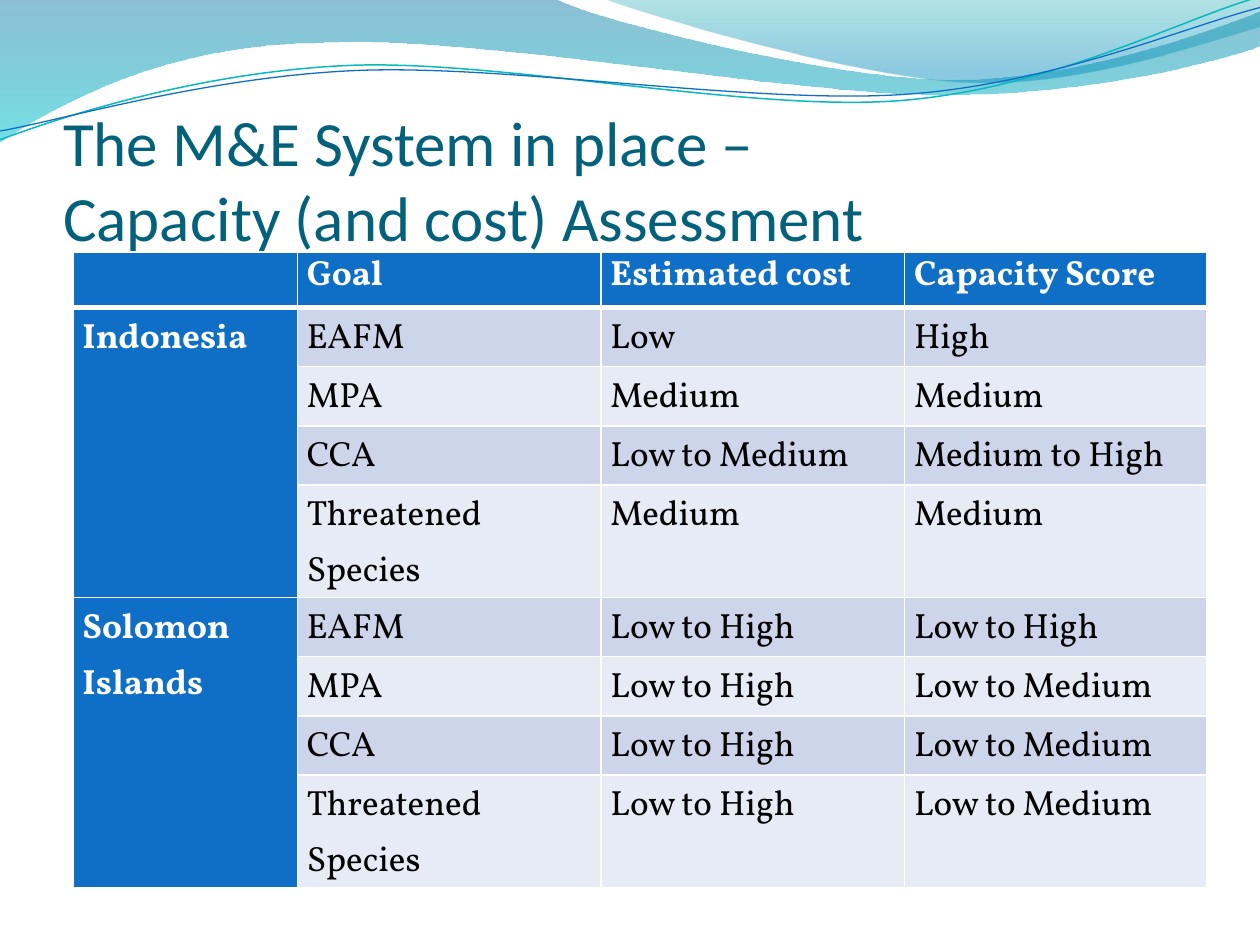
from dataclasses import dataclass

from lxml.etree import SubElement
from pptx import Presentation
from pptx.dml.color import RGBColor
from pptx.enum.text import MSO_ANCHOR, PP_ALIGN, MSO_AUTO_SIZE as AutoSize
from pptx.oxml import parse_xml
from pptx.oxml.ns import nsdecls, qn
from pptx.util import Pt

PX = 9144
COLORS = {
    "title": "04617B",
    "header": "0F6FC6",
    "odd_row": "CCD5EA",
    "even_row": "E7EBF5",
    "white": "FFFFFF",
    "black": "000000",
    "sea": "0074A1",
    "aqua": "00C6CF",
    "teal": "00A1A9",
    "sky": "008BBF",
    "teal_line": "0AB8BF",
}
TITLE_FONT = "Calibri"
TABLE_FONT = "Vollkorn"
CELL_INSET = Pt(5.4)

Point = tuple[int, int]


@dataclass(frozen=True)
class Stop:
    position: float
    color: str
    opacity: int


@dataclass(frozen=True)
class Wave:
    start: Point
    segments: tuple[tuple[Point, ...], ...]
    stops: tuple[Stop, ...] = ()
    line_color: str = ""
    line_width: float = 0


@dataclass(frozen=True)
class Country:
    name: str
    scores: tuple[tuple[str, str], ...]


WAVES = (
    Wave((0, -1), (
        ((440, -1),),
        ((476, 17), (664, 63), (758, 63)),
        ((853, 63), (958, 26), (1000, 9)),
        ((1001, 36),),
        ((983, 44), (870, 76), (746, 75)),
        ((622, 75), (382, 28), (257, 34)),
        ((129, 35), (46, 83), (-1, 113)),
        ((0, -1),),
    ), stops=(Stop(0, "sea", 45), Stop(1, "aqua", 55))),
    Wave((479, -1), (
        ((509, 11), (682, 62), (769, 65)),
        ((856, 69), (961, 32), (1000, 21)),
        ((1000, 0),),
        ((479, -1),),
    ), stops=(Stop(0, "teal", 30), Stop(0.8, "sky", 45))),
    Wave((0, 111), (
        ((48, 93), (158, 57), (277, 52)),
        ((395, 47), (593, 89), (713, 80)),
        ((833, 71), (938, 15), (998, -2)),
    ), line_color="teal_line", line_width=0.85),
    Wave((0, 104), (
        ((47, 96), (164, 61), (283, 56)),
        ((403, 51), (597, 83), (717, 75)),
        ((836, 67), (941, 21), (1000, 6)),
    ), line_color="header", line_width=0.75),
)

HEADINGS = ("", "Goal", "Estimated cost", "Capacity Score")
GOALS = ("EAFM", "MPA", "CCA", "Threatened Species")
COUNTRIES = (
    Country("Indonesia", (
        ("Low", "High"),
        ("Medium", "Medium"),
        ("Low to Medium", "Medium to High"),
        ("Medium", "Medium"),
    )),
    Country("Solomon Islands", (
        ("Low to High", "Low to High"),
        ("Low to High", "Low to Medium"),
        ("Low to High", "Low to Medium"),
        ("Low to High", "Low to Medium"),
    )),
)
COLUMN_WIDTHS = (178, 241, 241, 240)
HEADER_HEIGHT = 44
ROW_HEIGHT = 47


def rgb(name: str) -> RGBColor:
    return RGBColor.from_string(COLORS[name])


def write(frame, text: str, *, font: str, size: int, color: str, bold: bool = False,
          align=PP_ALIGN.LEFT, spacing: float | None = None) -> None:
    frame.text = text
    for para in frame.paragraphs:
        para.alignment = align
        if spacing:
            para.line_spacing = spacing
        for span in para.runs:
            span.font.name = font
            span.font.size = Pt(size)
            span.font.bold = bold
            span.font.color.rgb = rgb(color)


def bend(shape, segments: tuple[tuple[Point, ...], ...]) -> None:
    lines = iter(list(shape.element.iter(qn("a:lnTo"))))
    for segment in segments:
        first, *others = [next(lines) for _ in segment]
        if others:
            first.tag = qn("a:cubicBezTo")
            for line in others:
                first.append(line[0])
                line.getparent().remove(line)


def draw_wave(page, wave: Wave) -> None:
    builder = page.shapes.build_freeform(*wave.start, scale=PX)
    builder.add_line_segments([point for segment in wave.segments for point in segment],
                              close=bool(wave.stops))
    shape = builder.convert_to_shape()
    bend(shape, wave.segments)
    shape.shadow.inherit = False
    if not wave.stops:
        shape.fill.background()
        shape.line.color.rgb = rgb(wave.line_color)
        shape.line.width = Pt(wave.line_width)
        return
    shape.line.fill.background()
    shape.fill.gradient()
    shape.fill.gradient_angle = 270
    for target, stop in zip(shape.fill.gradient_stops, wave.stops):
        target.position = stop.position
        target.color.rgb = rgb(stop.color)
    gradient = shape.element.spPr.find(qn("a:gradFill"))
    for color, stop in zip(gradient.iter(qn("a:srgbClr")), wave.stops):
        SubElement(color, qn("a:alpha"), val=str(stop.opacity * 1000))


def draw_title(page, text: str) -> None:
    title = page.shapes.title
    page.shapes.element.append(title.element)
    title.left, title.top, title.width, title.height = (n * PX for n in (50, 77, 900, 125))
    frame = title.text_frame
    frame.word_wrap = True
    frame.auto_size = AutoSize.NONE
    frame.vertical_anchor = MSO_ANCHOR.BOTTOM
    frame.margin_left = frame.margin_right = frame.margin_bottom = 0
    frame.margin_top = 5 * PX
    write(frame, text, font=TITLE_FONT, size=36, color="title")


def border_cell(cell, bottom: int) -> None:
    properties = cell._tc.get_or_add_tcPr()
    for index, (side, width) in enumerate((("L", 1), ("R", 1), ("T", 1), ("B", bottom))):
        properties.insert(index, parse_xml(
            f'<a:ln{side} {nsdecls("a")} w="{Pt(width)}"><a:solidFill>'
            f'<a:srgbClr val="{COLORS["white"]}"/></a:solidFill></a:ln{side}>'
        ))


def fill_cell(cell, text: str, row: int, column: int) -> None:
    heading = row == 0 or column == 0
    cell.margin_left = cell.margin_right = CELL_INSET
    cell.margin_top = cell.margin_bottom = 0
    cell.fill.solid()
    cell.fill.fore_color.rgb = rgb("header" if heading else "odd_row" if row % 2 else "even_row")
    border_cell(cell, bottom=1 if row else 3)
    if text:
        write(cell.text_frame, text, font=TABLE_FONT, size=20, bold=heading,
              color="white" if heading else "black", align=PP_ALIGN.JUSTIFY,
              spacing=1.15 if row else None)


def draw_table(page) -> None:
    rows = [HEADINGS]
    for country in COUNTRIES:
        for index, (goal, scores) in enumerate(zip(GOALS, country.scores)):
            rows.append(("" if index else country.name, goal, *scores))
    heights = [HEADER_HEIGHT] + [ROW_HEIGHT] * (len(rows) - 1)
    table = page.shapes.add_table(len(rows), len(HEADINGS), 58 * PX, 200 * PX,
                                  sum(COLUMN_WIDTHS) * PX, sum(heights) * PX).table
    for column, width in zip(table.columns, COLUMN_WIDTHS):
        column.width = width * PX
    for table_row, height in zip(table.rows, heights):
        table_row.height = height * PX
    for row, texts in enumerate(rows):
        for column, text in enumerate(texts):
            fill_cell(table.cell(row, column), text, row, column)
    for first in range(1, len(rows), len(GOALS)):
        table.cell(first, 0).merge(table.cell(first + len(GOALS) - 1, 0))


def main() -> None:
    deck = Presentation()
    deck.slide_width, deck.slide_height = 1000 * PX, 750 * PX
    page = deck.slides.add_slide(deck.slide_layouts[5])
    for wave in WAVES:
        draw_wave(page, wave)
    draw_title(page, "The M&E System in place – \vCapacity (and cost) Assessment")
    draw_table(page)
    deck.save("out.pptx")


if __name__ == "__main__":
    main()
